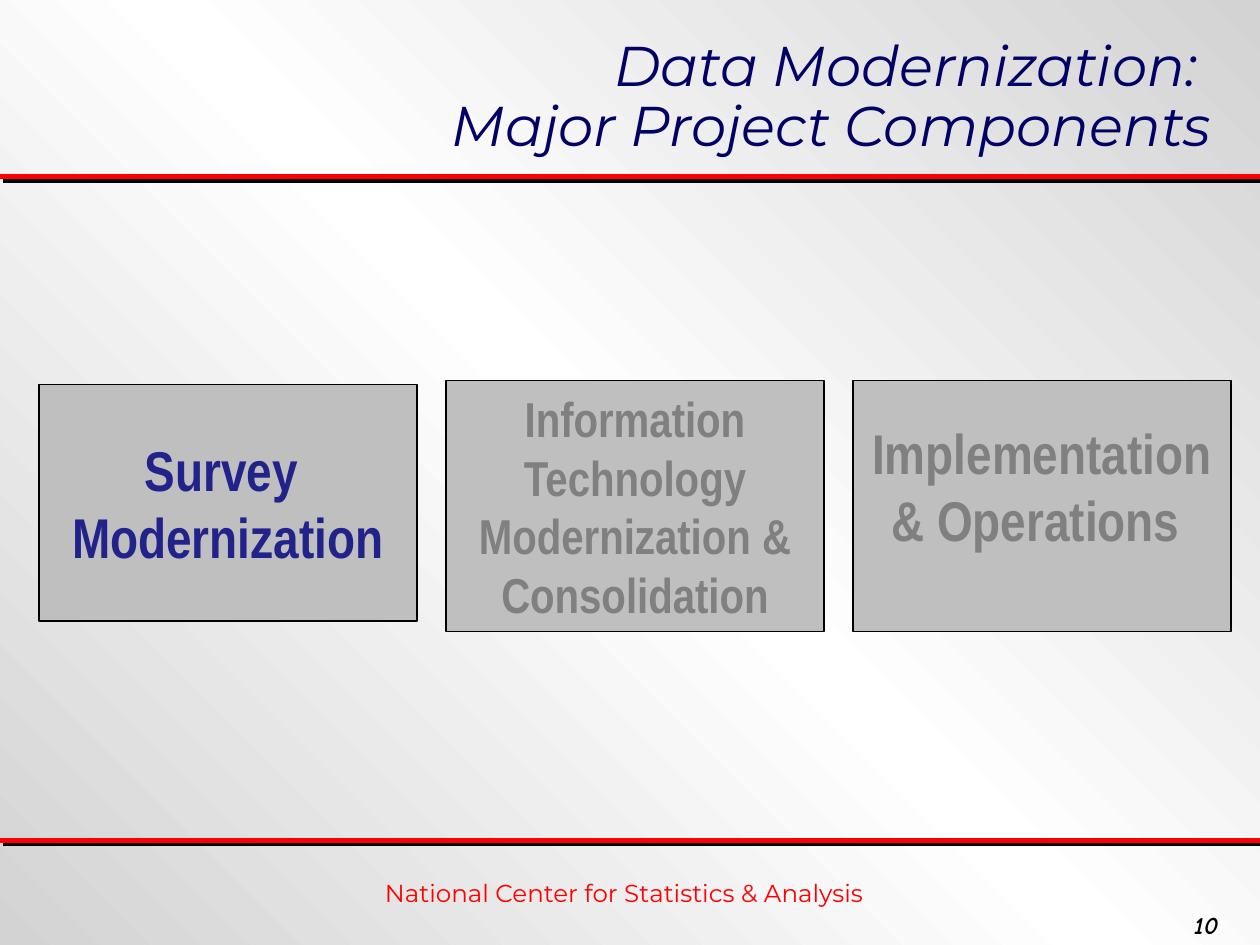
from dataclasses import dataclass

from lxml.etree import SubElement
from pptx import Presentation
from pptx.dml.color import RGBColor
from pptx.enum.shapes import MSO_CONNECTOR, MSO_SHAPE
from pptx.enum.text import MSO_ANCHOR, PP_ALIGN
from pptx.oxml import parse_xml
from pptx.oxml.ns import nsdecls, qn
from pptx.util import Inches, Pt

COLORS = {
    "navy": "000066", "active": "22228B", "muted": "808080", "box": "BFBFBF",
    "red": "FF0000", "black": "000000", "edge": "D3D3D3", "white": "FFFFFF",
}
BOX_LEFT, BOX_STEP, BOX_WIDTH = 0.31, 3.23, 3


@dataclass
class Component:
    text: str
    top: float
    height: float
    size: int
    color: str
    bottom_inset: float = 0.05


COMPONENTS = [
    Component("Survey \nModernization", 3.05, 1.88, 32, "active"),
    Component("Information Technology Modernization & Consolidation",
              3.02, 1.99, 28, "muted"),
    Component("Implementation & Operations ", 3.02, 1.99, 32, "muted", 0.37),
]


def rgb(name: str) -> RGBColor:
    return RGBColor.from_string(COLORS[name])


def format_text(tf, font: str, size: int, color: str, align: PP_ALIGN,
                bold: bool = False, italic: bool = False) -> None:
    tf.word_wrap = True
    for p in tf.paragraphs:
        p.alignment = align
        for r in p.runs:
            r.font.name, r.font.size = font, Pt(size)
            r.font.bold, r.font.italic = bold, italic
            r.font.color.rgb = rgb(color)


def set_background(s) -> None:
    s.background.fill.gradient()
    s.background.fill.gradient_angle = 45
    stops = s.background.fill.gradient_stops
    for stop in stops:
        stop.color.rgb = rgb("edge")
    stops[0].position, stops[1].position = 0, 1
    gs_list = s.background._cSld.find(".//" + qn("a:gsLst"))
    gs_list.insert(1, parse_xml(
        f'<a:gs {nsdecls("a")} pos="50000"><a:srgbClr val="{COLORS["white"]}"/></a:gs>'))


def add_rule(s, y: float) -> None:
    line = s.shapes.add_connector(MSO_CONNECTOR.STRAIGHT, Inches(0), Inches(y),
                                  Inches(10), Inches(y))
    line.line.color.rgb = rgb("red")
    line.line.width = Pt(3)
    effects = SubElement(line._element.spPr, qn("a:effectLst"))
    shadow = SubElement(effects, qn("a:outerShdw"), blurRad="0",
                        dist=str(Pt(2.8)), dir=str(45 * 60000),
                        algn="ctr", rotWithShape="0")
    SubElement(shadow, qn("a:srgbClr"), val=COLORS["black"])


def add_label(s, text: str, left: float, top: float, width: float,
              font: str, color: str, align: PP_ALIGN, strong: bool = False) -> None:
    tb = s.shapes.add_textbox(Inches(left), Inches(top), Inches(width), Inches(0.33))
    tb.text_frame.text = text
    format_text(tb.text_frame, font, 14, color, align, strong, strong)


def add_component(s, index: int, item: Component) -> None:
    sp = s.shapes.add_shape(MSO_SHAPE.RECTANGLE,
                            Inches(BOX_LEFT + index * BOX_STEP), Inches(item.top),
                            Inches(BOX_WIDTH), Inches(item.height))
    sp.shadow.inherit = False
    sp.fill.solid()
    sp.fill.fore_color.rgb = rgb("box")
    sp.line.color.rgb = rgb("black")
    sp.line.width = Pt(0.75)
    tf = sp.text_frame
    tf.text = item.text
    tf.vertical_anchor = MSO_ANCHOR.MIDDLE
    tf.margin_bottom = Inches(item.bottom_inset)
    format_text(tf, "Arial Narrow", item.size, item.color, PP_ALIGN.CENTER, bold=True)


def main() -> None:
    prs = Presentation()
    prs.slide_width, prs.slide_height = Inches(10), Inches(7.5)
    s = prs.slides.add_slide(prs.slide_layouts[5])
    set_background(s)

    # Title
    title = s.shapes.title
    title.left, title.top = Inches(0.35), Inches(0.25)
    title.width, title.height = Inches(9.37), Inches(1.06)
    tf = title.text_frame
    tf.text = "Data Modernization: \vMajor Project Components"
    tf.vertical_anchor = MSO_ANCHOR.MIDDLE
    tf.paragraphs[0].line_spacing = 0.9
    format_text(tf, "Montserrat", 32, "navy", PP_ALIGN.RIGHT, italic=True)

    # Header and footer rules
    for y in (1.4, 6.67):
        add_rule(s, y)

    # Footer and slide number
    add_label(s, "National Center for Statistics & Analysis", 0.58, 6.92, 8.75,
              "Montserrat", "red", PP_ALIGN.CENTER)
    add_label(s, "10", 9.38, 7.17, 0.6, "Comic Neue", "black", PP_ALIGN.LEFT, strong=True)

    # Project components
    for index, item in enumerate(COMPONENTS):
        add_component(s, index, item)

    prs.save("out.pptx")


if __name__ == "__main__":
    main()
